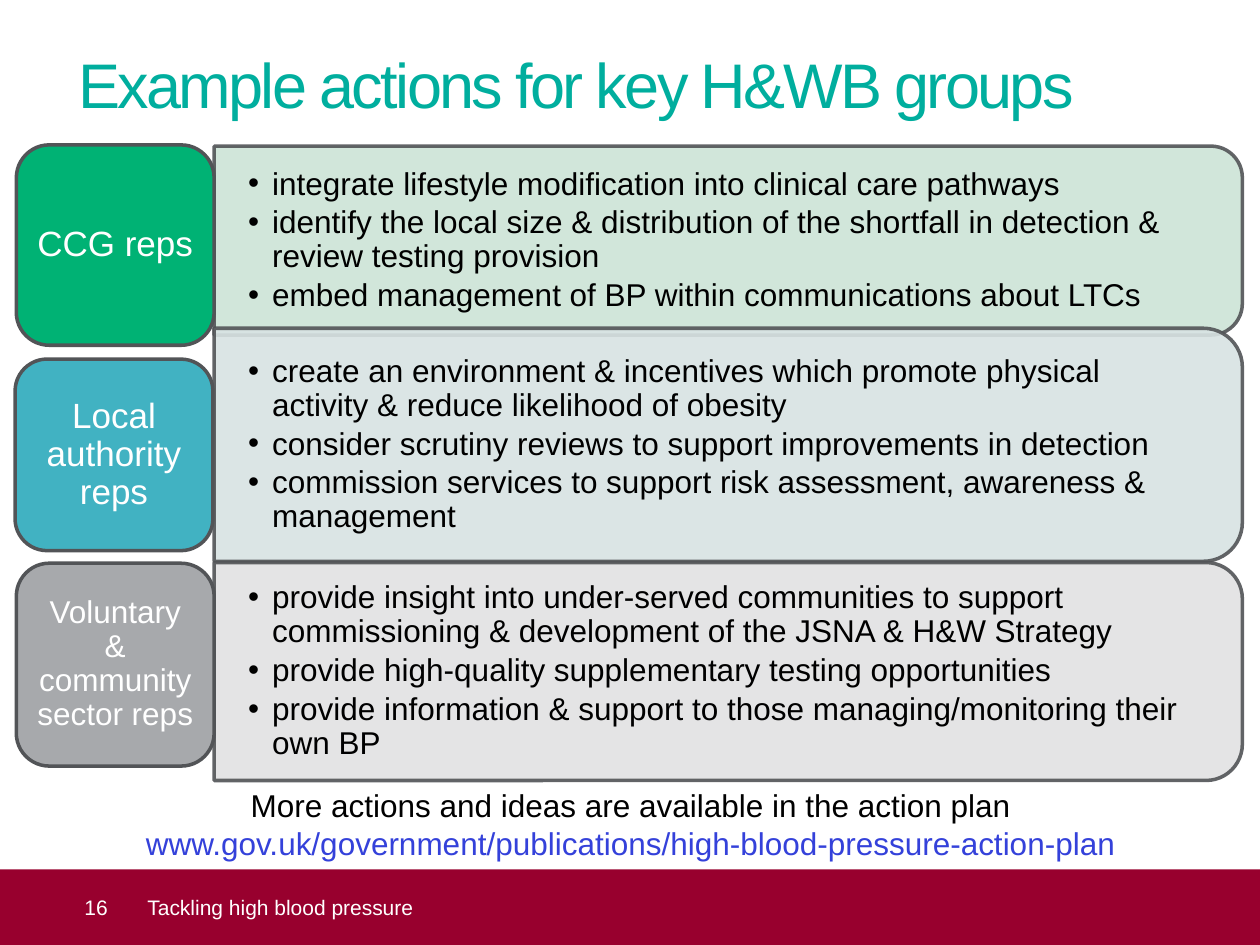
"""Build the slide of example actions for three health and wellbeing groups."""
from lxml import etree
from pptx import Presentation
from pptx.dml.color import RGBColor
from pptx.enum.shapes import MSO_SHAPE
from pptx.enum.text import MSO_ANCHOR, PP_ALIGN
from pptx.oxml.ns import qn
from pptx.util import Inches, Pt

LEFT, MID = PP_ALIGN.LEFT, PP_ALIGN.CENTER
TOP, CENTER = MSO_ANCHOR.TOP, MSO_ANCHOR.MIDDLE
RECT, ROUND = MSO_SHAPE.RECTANGLE, MSO_SHAPE.ROUNDED_RECTANGLE
PANEL = MSO_SHAPE.ROUND_2_SAME_RECTANGLE

COLORS = {
    "title": "00AE9E", "footer": "98002E", "edge": "525457",
    "link": "3441DA", "black": "000000", "white": "FFFFFF",
}
GROUPS = [
    {"name": "CCG reps", "size": 20, "fill": "00B274", "tint": "CCE4D6",
     "label": (0.13, 1.15, 1.57, 1.59), "mid": 1.91, "high": 1.5,
     "acts": ["integrate lifestyle modification into clinical care pathways",
              "identify the local size & distribution of the shortfall in detection & review testing provision",
              "embed management of BP within communications about LTCs"]},
    {"name": "Local authority reps", "size": 20, "fill": "41B2C2", "tint": "D8E3E3",
     "label": (0.12, 2.85, 1.57, 1.52), "mid": 3.53, "high": 1.85,
     "acts": ["create an environment & incentives which promote physical activity & reduce likelihood of obesity",
              "consider scrutiny reviews to support improvements in detection",
              "commission services to support risk assessment, awareness & management"]},
    {"name": "Voluntary & community sector reps", "size": 18, "fill": "A7A9AC", "tint": "E2E2E3",
     "label": (0.13, 4.47, 1.57, 1.61), "mid": 5.33, "high": 1.73,
     "acts": ["provide insight into under-served communities to support commissioning & development of the JSNA & H&W Strategy",
              "provide high-quality supplementary testing opportunities",
              "provide information & support to those managing/monitoring their own BP"]},
]

prs = Presentation()
prs.slide_width, prs.slide_height = Inches(10), Inches(7.5)
slide = prs.slides.add_slide(prs.slide_layouts[6])
text_box = slide.shapes.add_textbox


def draw(kind, box, fill, edge=None):
    shape = slide.shapes.add_shape(kind, *map(Inches, box))
    shape.shadow.inherit = False
    shape.fill.solid()
    shape.fill.fore_color.rgb = RGBColor.from_string(fill)
    if edge:
        shape.line.color.rgb = RGBColor.from_string(edge)
        shape.line.width = Pt(2)
    else:
        shape.line.fill.background()
    return shape


def write(shape, lines, size, color, align=LEFT, anchor=CENTER, pad=(0, 0, 0, 0)):
    frame = shape.text_frame
    frame.text = "\n".join(lines)
    frame.word_wrap = True
    frame.vertical_anchor = anchor
    (frame.margin_left, frame.margin_top,
     frame.margin_right, frame.margin_bottom) = map(Inches, pad)
    for para in frame.paragraphs:
        para.alignment = align
        for run in para.runs:
            run.font.name = "Arial"
            run.font.size = Pt(size)
            run.font.color.rgb = RGBColor.from_string(COLORS[color])
    return frame.paragraphs


title = write(text_box(Inches(0.62), Inches(0.36), Inches(8.78), Inches(0.71)),
              ["Example actions for key H&WB groups"], 36, "title", anchor=TOP)
title[0].runs[0].font._element.set("spc", "-150")

write(draw(RECT, (0, 6.9, 10, 0.6), COLORS["footer"]), ["16"], 12, "white", pad=(0.67, 0, 0.1, 0))
write(text_box(Inches(0.98), Inches(6.9), Inches(8.82), Inches(0.6)),
      ["Tackling high blood pressure"], 12, "white", pad=(0.19, 0, 0, 0))

wide, axis = 8.16, 5.78
for group in GROUPS:
    mid, high = group["mid"], group["high"]
    panel = draw(PANEL, (axis - high / 2, mid - wide / 2, high, wide), group["tint"], COLORS["edge"])
    panel.rotation = 90
    for tone in panel._element.spPr.iter(qn("a:srgbClr")):
        etree.SubElement(tone, qn("a:alpha")).set("val", "90000")

    body = text_box(Inches(axis - wide / 2), Inches(mid - high / 2 + 0.08),
                    Inches(wide - 0.08), Inches(high - 0.16))
    for para in write(body, group["acts"], 18, "black", pad=(0.27, 0.14, 0.27, 0.14)):
        para.line_spacing = 0.9
        para.space_after = Pt(2.7)
        props = para._p.get_or_add_pPr()
        props.set("marL", str(Inches(0.19)))
        props.set("indent", str(-Inches(0.19)))
        etree.SubElement(props, qn("a:buFont")).set("typeface", "Arial")
        etree.SubElement(props, qn("a:buChar")).set("char", "•")

    label = draw(ROUND, group["label"], group["fill"], COLORS["edge"])
    name = write(label, [group["name"]], group["size"], "white", MID, pad=(0.07, 0.04, 0.07, 0.04))
    name[0].line_spacing = 0.9

more = write(text_box(Inches(0.2), Inches(6.19), Inches(9.61), Inches(0.71)),
             ["More actions and ideas are available in the action plan",
              "www.gov.uk/government/publications/high-blood-pressure-action-plan"],
             18, "black", MID, TOP, (0.1, 0.05, 0.1, 0.05))
more[1].runs[0].font.color.rgb = RGBColor.from_string(COLORS["link"])

prs.save("out.pptx")
